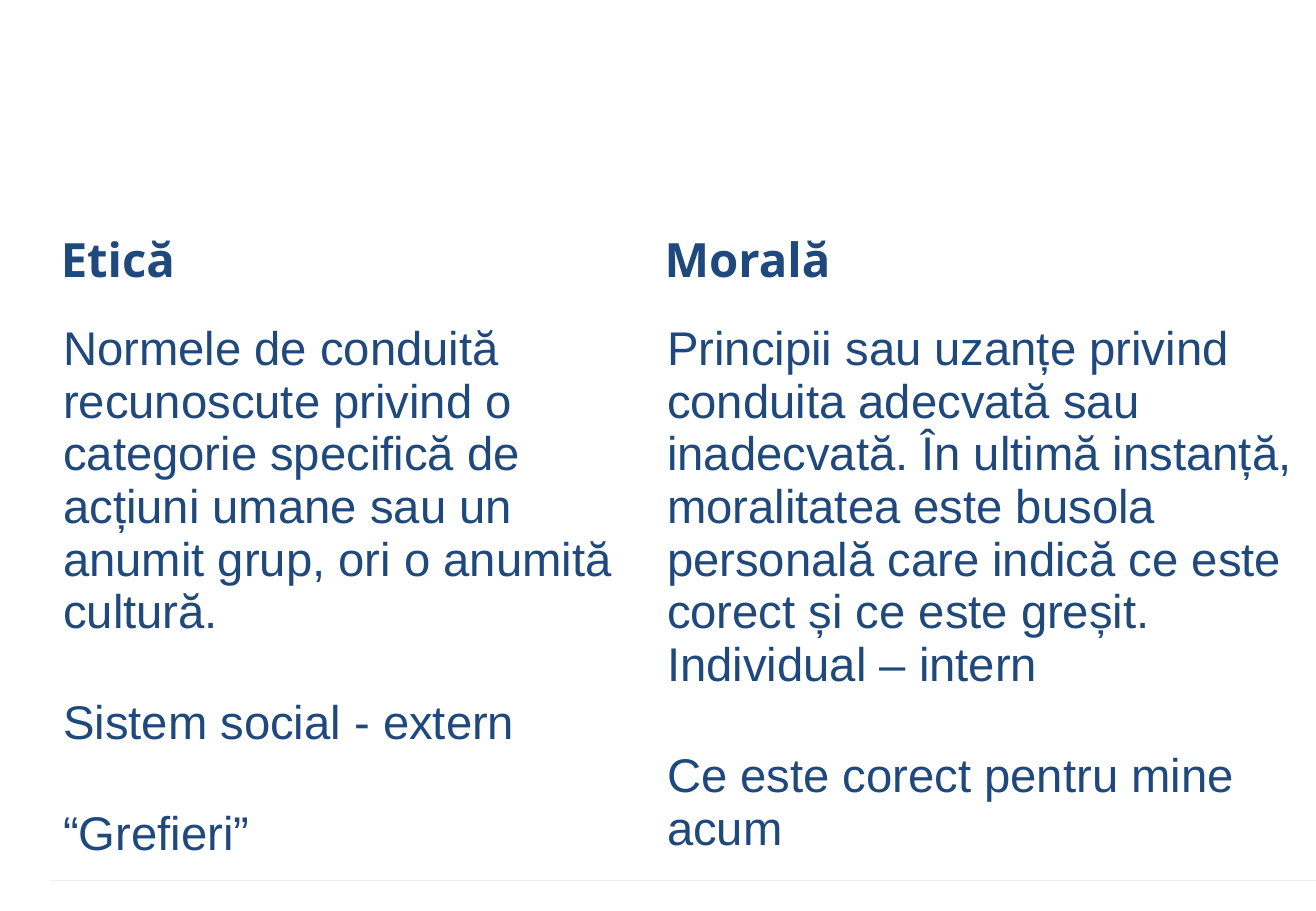
from dataclasses import dataclass

import pptx
import pptx.dml.color
import pptx.oxml
import pptx.oxml.ns
import pptx.table
import pptx.util

Inches = pptx.util.Inches
Pt = pptx.util.Pt


@dataclass(frozen=True)
class Theme:
    text: str = "1F497D"
    rule: str = "EDEDED"
    heading_font: str = "Open Sans"
    body_font: str = "Arial"
    size: float = 28
    gap: float = 34.5
    rule_width: float = 0.75


@dataclass(frozen=True)
class Line:
    text: str
    gap_before: bool = False


@dataclass(frozen=True)
class Concept:
    heading: str
    width: float
    lines: tuple[Line, ...]


THEME = Theme()
ROW_HEIGHTS = (0.55, 4.64)
HEADING_MARGINS = (0.08, 0.01, 0.08, 0.21)
BODY_MARGINS = (0.1, 0.05, 0.1, 0.05)

CONCEPTS = (
    Concept("Etică", 4.97, (
        Line("Normele de conduită recunoscute privind o categorie specifică de "
             "acțiuni umane sau un anumit grup, ori o anumită cultură."),
        Line("Sistem social - extern", gap_before=True),
        Line("“Grefieri”", gap_before=True),
    )),
    Concept("Morală", 5.44, (
        Line("Principii sau uzanțe privind conduita adecvată sau inadecvată. "
             "În ultimă instanță, moralitatea este busola personală care indică "
             "ce este corect și ce este greșit."),
        Line("Individual – intern"),
        Line("Ce este corect pentru mine acum", gap_before=True),
    )),
)


def fill_cell(cell: pptx.table._Cell, lines: tuple[Line, ...], font: str,
              bold: bool, margins: tuple[float, ...]) -> None:
    cell.fill.background()
    (cell.margin_left, cell.margin_top,
     cell.margin_right, cell.margin_bottom) = map(Inches, margins)
    tf = cell.text_frame
    for i, line in enumerate(lines):
        p = tf.add_paragraph() if i else tf.paragraphs[0]
        if line.gap_before:
            p.space_before = Pt(THEME.gap)
        r = p.add_run()
        r.text = line.text
        r.font.name = font
        r.font.size = Pt(THEME.size)
        r.font.bold = bold
        r.font.color.rgb = pptx.dml.color.RGBColor.from_string(THEME.text)


def add_bottom_rule(cell: pptx.table._Cell) -> None:
    """Insert the border ahead of the fill, as the schema requires."""
    rule = pptx.oxml.parse_xml(
        f'<a:lnB {pptx.oxml.ns.nsdecls("a")} w="{Pt(THEME.rule_width)}">'
        f'<a:solidFill><a:srgbClr val="{THEME.rule}"/></a:solidFill></a:lnB>')
    cell._tc.get_or_add_tcPr().insert(0, rule)


def main() -> None:
    prs = pptx.Presentation()
    prs.slide_width, prs.slide_height = Inches(10.83), Inches(7.5)
    s = prs.slides.add_slide(prs.slide_layouts[6])
    table = s.shapes.add_table(
        len(ROW_HEIGHTS), len(CONCEPTS), Inches(0.42), Inches(1.86),
        Inches(sum(c.width for c in CONCEPTS)), Inches(sum(ROW_HEIGHTS))).table
    table.first_row = table.horz_banding = False
    for row, height in zip(table.rows, ROW_HEIGHTS):
        row.height = Inches(height)
    for col, concept in enumerate(CONCEPTS):
        table.columns[col].width = Inches(concept.width)
        fill_cell(table.cell(0, col), (Line(concept.heading),),
                  THEME.heading_font, True, HEADING_MARGINS)
        body = table.cell(1, col)
        fill_cell(body, concept.lines, THEME.body_font, False, BODY_MARGINS)
        add_bottom_rule(body)
    prs.save("out.pptx")


if __name__ == "__main__":
    main()
